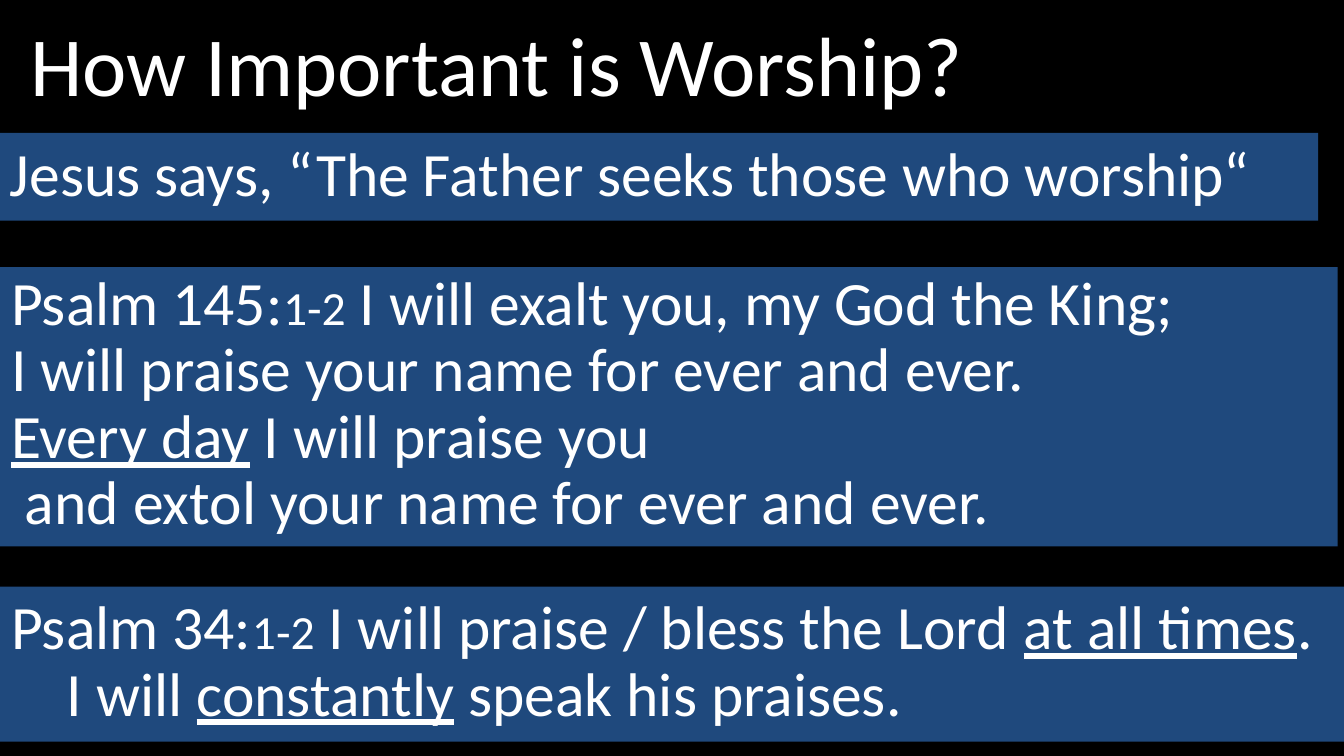
from pptx import Presentation
from pptx.dml.color import RGBColor
from pptx.enum import shapes, text
from pptx.util import Cm, Pt

COLORS = {"back": "000000", "band": "1F497D", "text": "FFFFFF"}
FONT = "Calibri"
BIG, SMALL = 44, 34

# A line is (indent in cm, runs); a run is (words, style).
TITLE = [(0, [("How Important is Worship?", "")])]
JESUS = [(0.03, [("Jesus says, “The Father seeks those who worship“", "")])]
PSALM_145 = [
    (0.03, [("Psalm 145:", ""), ("1-2", "small"),
            (" I will exalt you, my God the King;", "")]),
    (0.03, [("I will praise your name for ever and ever.", "")]),
    (0.03, [("Every day", "under"), (" I will praise you", "")]),
    (0.03, [(" and extol your name for ever and ever.", "")]),
]
PSALM_34 = [
    (0.03, [("Psalm 34:", ""), ("1-2", "small"),
            (" I will praise / bless the Lord ", ""),
            ("at all times", "under"), (".", "")]),
    (1.43, [("I will ", ""), ("constantly", "under"),
            (" speak his praises.", "")]),
]
# Left, top, width, height in cm, then the top and bottom inset.
BANDS = [
    (JESUS, (-0.03, 3.35, 33.25, 2.21), 0.25),
    (PSALM_145, (0, 6.73, 33.71, 7.04), 0.13),
    (PSALM_34, (0, 14.78, 33.87, 3.91), 0.25),
]


def color(name):
    return RGBColor.from_string(COLORS[name])


def write(shape, lines, size=BIG, pad=0.25):
    frame = shape.text_frame
    frame.word_wrap = True
    frame.vertical_anchor = text.MSO_ANCHOR.TOP
    frame.margin_left = frame.margin_right = Cm(0.25)
    frame.margin_top = frame.margin_bottom = Cm(pad)
    for i, (indent, runs) in enumerate(lines):
        para = frame.add_paragraph() if i else frame.paragraphs[0]
        para.alignment = text.PP_ALIGN.LEFT
        para.line_spacing = 0.9
        para._p.get_or_add_pPr().set("marL", str(Cm(indent)))
        for words, style in runs:
            run = para.add_run()
            run.text = words
            font = run.font
            font.name = FONT
            font.size = Pt(SMALL if style == "small" else size)
            font.color.rgb = color("text")
            if style == "under":
                font.underline = True


def main():
    deck = Presentation()
    deck.slide_width, deck.slide_height = Cm(33.87), Cm(19.05)
    slide = deck.slides.add_slide(deck.slide_layouts[6])
    slide.background.fill.solid()
    slide.background.fill.fore_color.rgb = color("back")

    title = slide.shapes.add_textbox(Cm(0.51), Cm(0.36), Cm(32.99), Cm(2.82))
    write(title, TITLE, size=60)

    for lines, place, pad in BANDS:
        band = slide.shapes.add_shape(shapes.MSO_SHAPE.RECTANGLE,
                                      *map(Cm, place))
        band.shadow.inherit = False
        band.fill.solid()
        band.fill.fore_color.rgb = color("band")
        band.line.fill.background()
        write(band, lines, pad=pad)

    deck.save("out.pptx")


if __name__ == "__main__":
    main()
